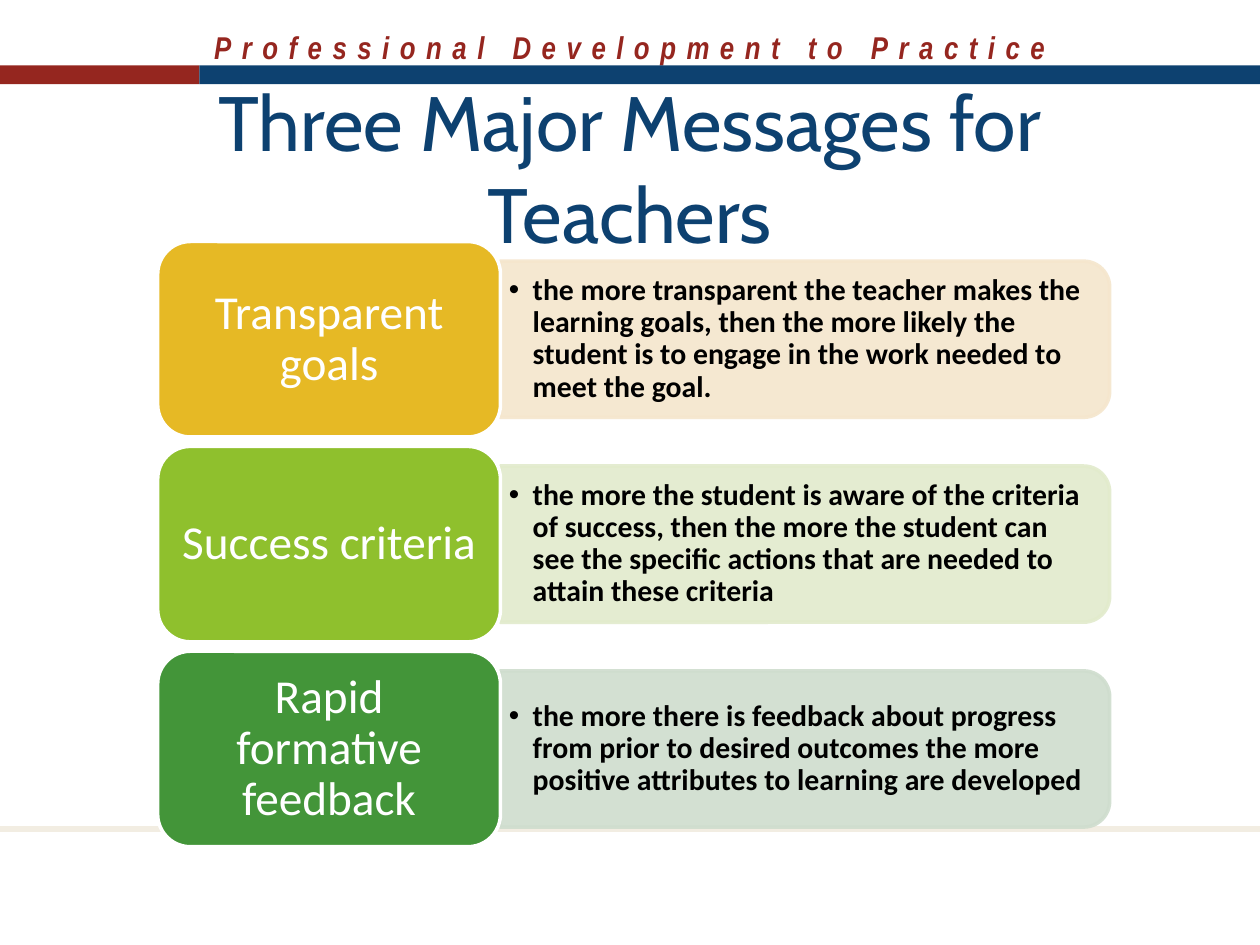
from dataclasses import dataclass

from lxml import etree
from pptx import Presentation
from pptx.dml.color import RGBColor
from pptx.enum.shapes import MSO_CONNECTOR, MSO_SHAPE
from pptx.enum.text import MSO_ANCHOR, MSO_AUTO_SIZE, PP_ALIGN
from pptx.oxml.ns import qn
from pptx.util import Cm, Pt

RECTANGLE = MSO_SHAPE.RECTANGLE
ROUNDED = MSO_SHAPE.ROUNDED_RECTANGLE
ROUND_TOP = MSO_SHAPE.ROUND_2_SAME_RECTANGLE
STRAIGHT = MSO_CONNECTOR.STRAIGHT
CENTER, LEFT = PP_ALIGN.CENTER, PP_ALIGN.LEFT
MIDDLE = MSO_ANCHOR.MIDDLE
NO_AUTOFIT = MSO_AUTO_SIZE.NONE

RED, BLUE, SAND, WHITE, BLACK = "95261F", "0D4170", "F2EDE2", "FFFFFF", "000000"
PAGE_WIDTH, PAGE_HEIGHT = 25.4, 19.05
ROW_CENTER, ROW_PITCH = 6.84, 4.13
CARD_LEFT, CARD_WIDTH, CARD_HEIGHT = 3.18, 6.91, 3.94
PANEL_LEFT, PANEL_WIDTH, PANEL_HEIGHT = 10.08, 12.29, 3.15
DETAIL_WIDTH, DETAIL_HEIGHT = 12.14, 2.84


@dataclass
class Message:
    label: str
    detail: str
    card_color: str
    panel_color: str


@dataclass
class TextStyle:
    font: str
    size: float
    color: str
    bold: bool = False
    italic: bool = False
    align: int = CENTER
    line_spacing: float = 1.0
    margins: tuple = (0.25, 0.13)


HEADER_STYLE = TextStyle("Arial Narrow", 18, RED, bold=True, italic=True)
TITLE_STYLE = TextStyle("Cabin", 44, BLUE)
LABEL_STYLE = TextStyle("Calibri", 27, WHITE, line_spacing=0.9, margins=(0.28, 0.15))
DETAIL_STYLE = TextStyle("Calibri", 17, BLACK, bold=True, align=LEFT,
                         line_spacing=0.9, margins=(0.18, 0.1))

MESSAGES = [
    Message("Transparent goals",
            "the more transparent the teacher makes the learning goals, then the more "
            "likely the student is to engage in the work needed to meet the goal.",
            "E6B925", "F5E6CD"),
    Message("Success criteria",
            "the more the student is aware of the criteria of success, then the more the "
            "student can see the specific actions that are needed to attain these criteria",
            "8FC02D", "E2EBCC"),
    Message("Rapid formative feedback",
            "the more there is feedback about progress from prior to desired outcomes "
            "the more positive attributes to learning are developed",
            "439539", "CFDDCE"),
]


def rgb(color: str) -> RGBColor:
    return RGBColor.from_string(color)


def write_text(shape, text: str, style: TextStyle):
    frame = shape.text_frame
    frame.text = text
    frame.word_wrap = True
    frame.auto_size = NO_AUTOFIT
    frame.vertical_anchor = MIDDLE
    frame.margin_left = frame.margin_right = Cm(style.margins[0])
    frame.margin_top = frame.margin_bottom = Cm(style.margins[1])
    para = frame.paragraphs[0]
    para.alignment = style.align
    para.line_spacing = style.line_spacing
    span = para.runs[0]
    span.font.name = style.font
    span.font.size = Pt(style.size)
    span.font.bold = style.bold
    span.font.italic = style.italic
    span.font.color.rgb = rgb(style.color)
    return para


def add_block(page, kind, left: float, top: float, width: float, height: float,
              fill: str, line: str = ""):
    shape = page.shapes.add_shape(kind, Cm(left), Cm(top), Cm(width), Cm(height))
    shape.shadow.inherit = False
    shape.fill.solid()
    shape.fill.fore_color.rgb = rgb(fill)
    if line:
        shape.line.color.rgb = rgb(line)
        shape.line.width = Pt(2)
    else:
        shape.line.fill.background()
    return shape


def add_text_box(page, left: float, top: float, width: float, height: float,
                 text: str, style: TextStyle):
    box = page.shapes.add_textbox(Cm(left), Cm(top), Cm(width), Cm(height))
    return write_text(box, text, style)


def set_opacity(shape, percent: int) -> None:
    for color in shape.element.spPr.iter(qn("a:srgbClr")):
        etree.SubElement(color, qn("a:alpha"), val=str(percent * 1000))


def add_bullet(para, indent: float) -> None:
    properties = para._p.get_or_add_pPr()
    properties.set("marL", str(Cm(indent)))
    properties.set("indent", str(-Cm(indent)))
    etree.SubElement(properties, qn("a:buFont"), typeface="Arial")
    etree.SubElement(properties, qn("a:buChar"), char="•")


def add_header(page) -> None:
    para = add_text_box(page, 0, 0.43, PAGE_WIDTH, 1.02,
                        "Professional Development to Practice", HEADER_STYLE)
    para.runs[0].font._element.set("spc", "600")
    red_width = 4.02
    add_block(page, RECTANGLE, 0, 1.32, red_width, 0.38, RED)
    add_block(page, RECTANGLE, red_width, 1.32, PAGE_WIDTH - red_width, 0.38, BLUE)


def add_footer_line(page) -> None:
    line = page.shapes.add_connector(STRAIGHT, 0, Cm(16.71), Cm(PAGE_WIDTH), Cm(16.71))
    line.line.color.rgb = rgb(SAND)
    line.line.width = Pt(3)
    etree.SubElement(line.element.spPr, qn("a:effectLst"))


def add_message(page, message: Message, center: float) -> None:
    # The panel is drawn upright, then turned so its round corners face right.
    middle = PANEL_LEFT + PANEL_WIDTH / 2
    panel = add_block(page, ROUND_TOP, middle - PANEL_HEIGHT / 2, center - PANEL_WIDTH / 2,
                      PANEL_HEIGHT, PANEL_WIDTH, message.panel_color, message.panel_color)
    panel.rotation = 90
    set_opacity(panel, 90)
    para = add_text_box(page, PANEL_LEFT, center - DETAIL_HEIGHT / 2, DETAIL_WIDTH,
                        DETAIL_HEIGHT, message.detail, DETAIL_STYLE)
    add_bullet(para, 0.48)
    card = add_block(page, ROUNDED, CARD_LEFT, center - CARD_HEIGHT / 2,
                     CARD_WIDTH, CARD_HEIGHT, message.card_color, WHITE)
    write_text(card, message.label, LABEL_STYLE)


def main() -> None:
    deck = Presentation()
    deck.slide_width, deck.slide_height = Cm(PAGE_WIDTH), Cm(PAGE_HEIGHT)
    page = deck.slides.add_slide(deck.slide_layouts[5])
    add_header(page)
    add_footer_line(page)
    title = page.shapes.title
    title.left, title.top, title.width, title.height = Cm(1.27), Cm(1.83), Cm(22.86), Cm(3.05)
    write_text(title, "Three Major Messages for Teachers", TITLE_STYLE)
    for row, message in enumerate(MESSAGES):
        add_message(page, message, ROW_CENTER + row * ROW_PITCH)
    deck.save("out.pptx")


if __name__ == "__main__":
    main()
